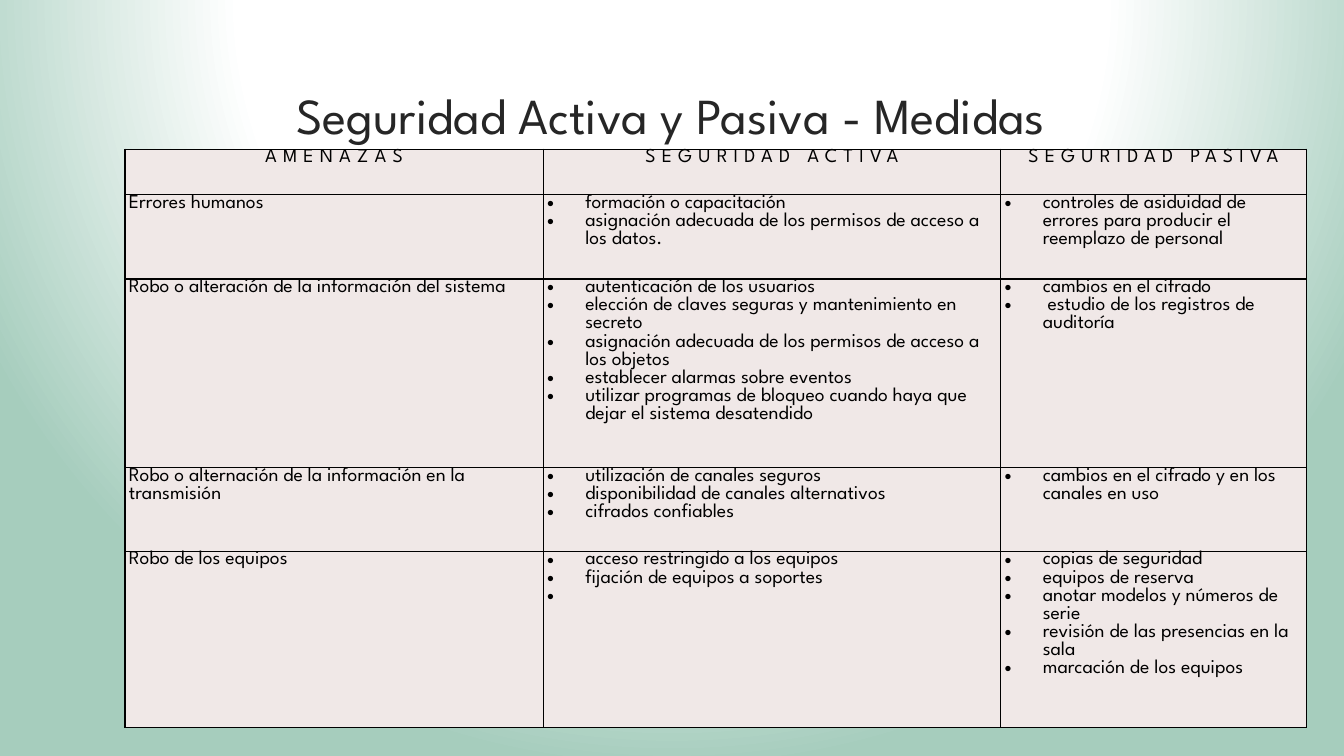
from lxml import etree
from pptx import Presentation
from pptx.dml.color import RGBColor
from pptx.enum.text import MSO_ANCHOR, PP_ALIGN
from pptx.oxml import parse_xml
from pptx.oxml.ns import nsdecls, qn
from pptx.util import Cm, Pt

LEFT, CENTER = PP_ALIGN.LEFT, PP_ALIGN.CENTER
MIDDLE, TOP = MSO_ANCHOR.MIDDLE, MSO_ANCHOR.TOP

COLORS = {
    "title": "262626",
    "text": "000000",
    "line": "000000",
    "cell": "F0E8E7",
    "white": "FFFFFF",
    "green": "A6CDBD",
}
FONT = "League Spartan"
BULLET_FONT = "Arial"
INDENT = Cm(0.96)

COLS = [10.54, 11.53, 7.7]
ROWS = [1.14, 2.13, 4.75, 2.11, 4.44]
HEADS = ["AMENAZAS", "SEGURIDAD ACTIVA", "SEGURIDAD PASIVA"]
# Threat, active measures, passive measures
THREATS = [
    ("Errores humanos",
     ["formación o capacitación",
      "asignación adecuada de los permisos de acceso a los datos."],
     ["controles de asiduidad de errores para producir el reemplazo de personal"]),
    ("Robo o alteración de la información del sistema",
     ["autenticación de los usuarios",
      "elección de claves seguras y mantenimiento en secreto",
      "asignación adecuada de los permisos de acceso a los objetos",
      "establecer alarmas sobre eventos",
      "utilizar programas de bloqueo cuando haya que dejar el sistema desatendido"],
     ["cambios en el cifrado",
      " estudio de los registros de auditoría"]),
    ("Robo o alternación de la información en la transmisión",
     ["utilización de canales seguros",
      "disponibilidad de canales alternativos",
      "cifrados confiables"],
     ["cambios en el cifrado y en los canales en uso"]),
    ("Robo de los equipos",
     ["acceso restringido a los equipos",
      "fijación de equipos a soportes",
      " "],
     ["copias de seguridad",
      "equipos de reserva",
      "anotar modelos y números de serie",
      "revisión de las presencias en la sala",
      "marcación de los equipos"]),
]


class Deck:
    def __init__(self):
        self.prs = Presentation()
        self.prs.slide_width, self.prs.slide_height = Cm(33.87), Cm(19.05)
        self.slide = self.prs.slides.add_slide(self.prs.slide_layouts[5])

    def style(self, para, size, color, align=LEFT):
        para.alignment = align
        font = para.font
        font.name, font.size, font.bold = FONT, Pt(size), False
        font.color.rgb = RGBColor.from_string(COLORS[color])

    def glow(self):
        """Radial background, white at the top centre."""
        stops = "".join(
            f'<a:gs pos="{pos * 1000}"><a:srgbClr val="{COLORS[name]}"/></a:gs>'
            for pos, name in [(0, "white"), (56, "white"), (100, "green")])
        back = parse_xml(
            f'<p:bg {nsdecls("p", "a")}><p:bgPr><a:gradFill rotWithShape="1">'
            f'<a:gsLst>{stops}</a:gsLst><a:path path="circle">'
            '<a:fillToRect l="50000" t="-80000" r="50000" b="180000"/></a:path>'
            '</a:gradFill><a:effectLst/></p:bgPr></p:bg>')
        self.slide.element.cSld.insert(0, back)

    def title(self, text, left, top, width, height):
        box = self.slide.shapes.title
        box.left, box.top = Cm(left), Cm(top)
        box.width, box.height = Cm(width), Cm(height)
        frame = box.text_frame
        frame.text = text
        frame.vertical_anchor = MIDDLE
        self.style(frame.paragraphs[0], 36, "title")

    def bullet(self, para):
        props = para._p.get_or_add_pPr()
        props.set("marL", str(INDENT))
        props.set("indent", str(-INDENT))
        etree.SubElement(props, qn("a:buFont")).set("typeface", BULLET_FONT)
        etree.SubElement(props, qn("a:buChar")).set("char", "•")

    def border(self, cell):
        props = cell._tc.get_or_add_tcPr()
        for spot, side in enumerate(("lnL", "lnR", "lnT", "lnB")):
            props.insert(spot, parse_xml(
                f'<a:{side} {nsdecls("a")} w="{Pt(1)}"><a:solidFill>'
                f'<a:srgbClr val="{COLORS["line"]}"/></a:solidFill></a:{side}>'))

    def cell(self, cell, content, head=False):
        cell.margin_left = cell.margin_right = Cm(0.1)
        cell.margin_top = cell.margin_bottom = 0
        cell.vertical_anchor = TOP
        cell.fill.solid()
        cell.fill.fore_color.rgb = RGBColor.from_string(COLORS["cell"])
        self.border(cell)
        listed = isinstance(content, list)
        cell.text_frame.text = "\n".join(content) if listed else content
        for para in cell.text_frame.paragraphs:
            if listed:
                self.bullet(para)
            self.style(para, 14, "text", CENTER if head else LEFT)
            if head:
                para.runs[0].font._element.set("spc", "440")

    def table(self, rows, left, top):
        table = self.slide.shapes.add_table(
            len(ROWS), len(COLS), Cm(left), Cm(top),
            Cm(sum(COLS)), Cm(sum(ROWS))).table
        table.first_row = table.horz_banding = False
        for col, width in zip(table.columns, COLS):
            col.width = Cm(width)
        for row, height in zip(table.rows, ROWS):
            row.height = Cm(height)
        for r, row in enumerate(rows):
            for c, content in enumerate(row):
                self.cell(table.cell(r, c), content, head=r == 0)


def main():
    deck = Deck()
    # Background and title
    deck.glow()
    deck.title("Seguridad Activa y Pasiva - Medidas", 7.21, 1.73, 24.77, 2.31)
    # Table of threats and measures
    deck.table([HEADS, *THREATS], 3.15, 3.76)
    deck.prs.save("out.pptx")


if __name__ == "__main__":
    main()
